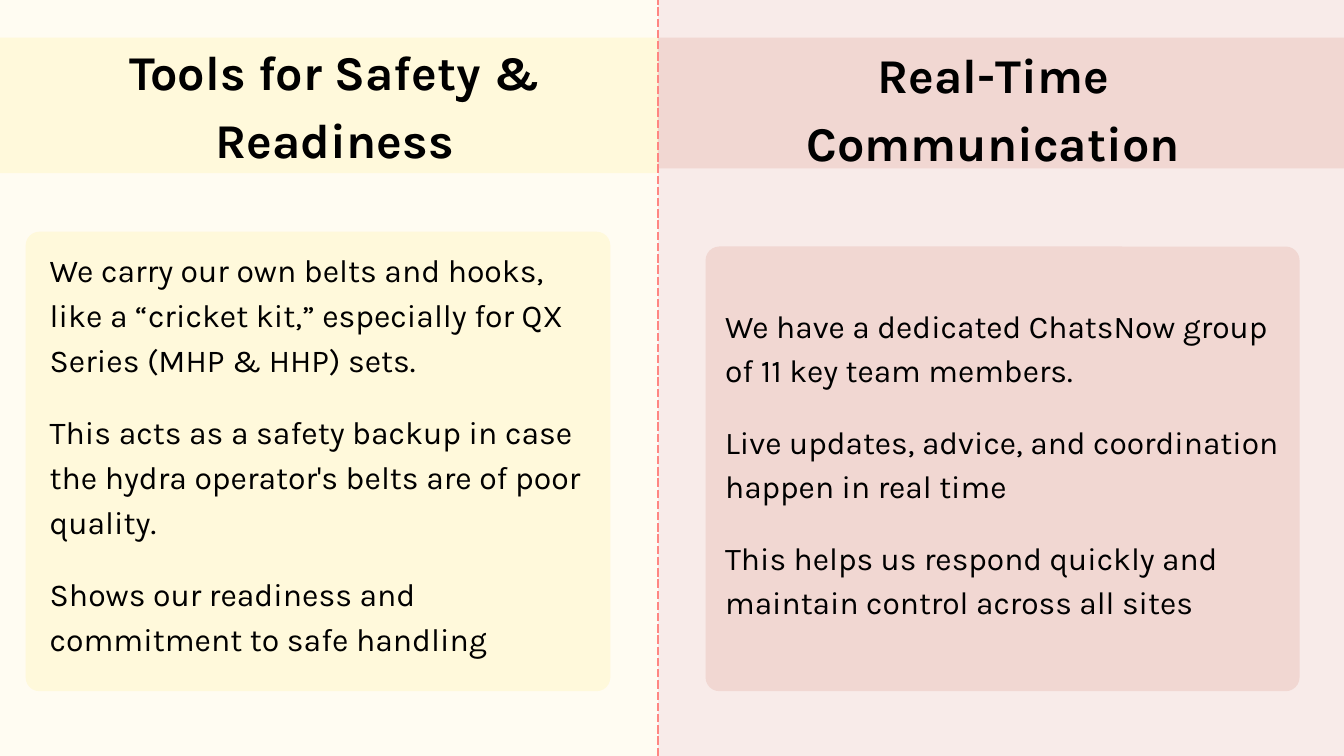
from dataclasses import dataclass

from lxml.etree import SubElement
from pptx import Presentation
from pptx.dml.color import RGBColor
from pptx.enum.dml import MSO_LINE
from pptx.enum.shapes import MSO_CONNECTOR, MSO_SHAPE
from pptx.enum.text import PP_ALIGN
from pptx.oxml.ns import qn
from pptx.util import Cm, Pt


@dataclass(frozen=True)
class Theme:
    """Colours, font and type sizes of the slide."""
    cream: str = "FFF9DB"
    rose: str = "EAC3BB"
    divider: str = "FF8682"
    ink: str = "000000"
    font: str = "Karla"
    title_size: float = 52
    title_leading: float = 72.8
    body_leading: float = 1.4
    corner: float = 0.52


@dataclass(frozen=True)
class Box:
    """A rectangle in centimetres."""
    left: float
    top: float
    width: float
    height: float

    def inside(self, part):
        """Return a part of this box in slide coordinates."""
        return Box(self.left + part.left, self.top + part.top, part.width, part.height)

    def lengths(self):
        """Return the four lengths for python-pptx."""
        return [Cm(value) for value in (self.left, self.top, self.width, self.height)]


@dataclass(frozen=True)
class Column:
    """Content and layout of one half; parts are relative to its box."""
    colour: str
    panel_alpha: int
    part_alpha: int
    band: Box
    title_box: Box
    card: Box
    first_point: Box
    point_pitch: float
    body_size: float
    title: str
    points: tuple


THEME = Theme()
SLIDE_WIDTH, SLIDE_HEIGHT = 50.8, 28.58
DIVIDER_X = 24.87

SAFETY = Column(
    THEME.cream, 35, 100,
    band=Box(0.05, 1.42, 25.6, 5.13),
    title_box=Box(1.75, 1.22, 23.32, 4.95),
    card=Box(1.73, 8.76, 22.1, 17.37),
    first_point=Box(2.64, 9.25, 20.2, 4.9),
    point_pitch=6.12,
    body_size=34.2,
    title="Tools for Safety & Readiness",
    points=(
        "We carry our own belts and hooks, like a “cricket kit,” especially for QX Series (MHP & HHP) sets.",
        "This acts as a safety backup in case the hydra operator's belts are of poor quality.",
        "Shows our readiness and commitment to safe handling",
    ),
)
COMMUNICATION = Column(
    THEME.rose, 32, 49,
    band=Box(0, 1.47, 26.34, 4.95),
    title_box=Box(1.06, 1.4, 23.22, 5.03),
    card=Box(1.8, 9.37, 22.45, 16.81),
    first_point=Box(2.54, 11.4, 21.6, 3.23),
    point_pitch=4.39,
    body_size=34,
    title="Real-Time Communication",
    points=(
        "We have a dedicated ChatsNow group of 11 key team members.",
        "Live updates, advice, and coordination happen in real time",
        "This helps us respond quickly and maintain control across all sites",
    ),
)


def add_area(slide, box, colour, alpha, rounded=False):
    """Add a filled area without outline, optionally with round corners."""
    kind = MSO_SHAPE.ROUNDED_RECTANGLE if rounded else MSO_SHAPE.RECTANGLE
    area = slide.shapes.add_shape(kind, *box.lengths())
    area.shadow.inherit = False
    area.line.fill.background()
    area.fill.solid()
    area.fill.fore_color.rgb = RGBColor.from_string(colour)
    if rounded:
        area.adjustments[0] = THEME.corner / min(box.width, box.height)
    if alpha < 100:
        tint = area.fill._xPr.find(qn("a:solidFill"))[0]
        SubElement(tint, qn("a:alpha"), val=str(alpha * 1000))


def add_text(slide, box, wording, size, leading, bold=False, align=PP_ALIGN.LEFT):
    """Add a wrapped text box without margins."""
    frame = slide.shapes.add_textbox(*box.lengths()).text_frame
    frame.word_wrap = True
    frame.margin_left = frame.margin_right = frame.margin_top = frame.margin_bottom = 0
    paragraph = frame.paragraphs[0]
    paragraph.alignment = align
    paragraph.line_spacing = Pt(leading)
    run = paragraph.add_run()
    run.text = wording
    run.font.name = THEME.font
    run.font.size = Pt(size)
    run.font.bold = bold
    run.font.color.rgb = RGBColor.from_string(THEME.ink)


def add_column(slide, box, column):
    """Place a tinted half with its title band and card of points."""
    add_area(slide, box, column.colour, column.panel_alpha)
    add_area(slide, box.inside(column.band), column.colour, column.part_alpha)
    add_text(slide, box.inside(column.title_box), column.title, THEME.title_size,
             THEME.title_leading, bold=True, align=PP_ALIGN.CENTER)
    add_area(slide, box.inside(column.card), column.colour, column.part_alpha, rounded=True)
    first = box.inside(column.first_point)
    for index, point in enumerate(column.points):
        place = Box(first.left, first.top + index * column.point_pitch, first.width, first.height)
        add_text(slide, place, point, column.body_size, column.body_size * THEME.body_leading)


def add_divider(slide, box):
    """Draw the dashed line along the left side of a box."""
    divider = slide.shapes.add_connector(
        MSO_CONNECTOR.STRAIGHT, Cm(box.left), Cm(box.top + box.height), Cm(box.left), Cm(box.top))
    divider.line.color.rgb = RGBColor.from_string(THEME.divider)
    divider.line.width = Pt(3)
    divider.line.dash_style = MSO_LINE.SQUARE_DOT
    SubElement(divider._element.spPr, qn("a:effectLst"))


def main():
    """Build and save the slide."""
    deck = Presentation()
    deck.slide_width, deck.slide_height = Cm(SLIDE_WIDTH), Cm(SLIDE_HEIGHT)
    slide = deck.slides.add_slide(deck.slide_layouts[6])
    right_half = Box(DIVIDER_X, -0.05, SLIDE_WIDTH - DIVIDER_X, SLIDE_HEIGHT + 0.05)
    add_column(slide, Box(-0.76, 0, 25.6, 29.08), SAFETY)
    add_column(slide, right_half, COMMUNICATION)
    add_divider(slide, right_half)
    deck.save("out.pptx")


if __name__ == "__main__":
    main()
